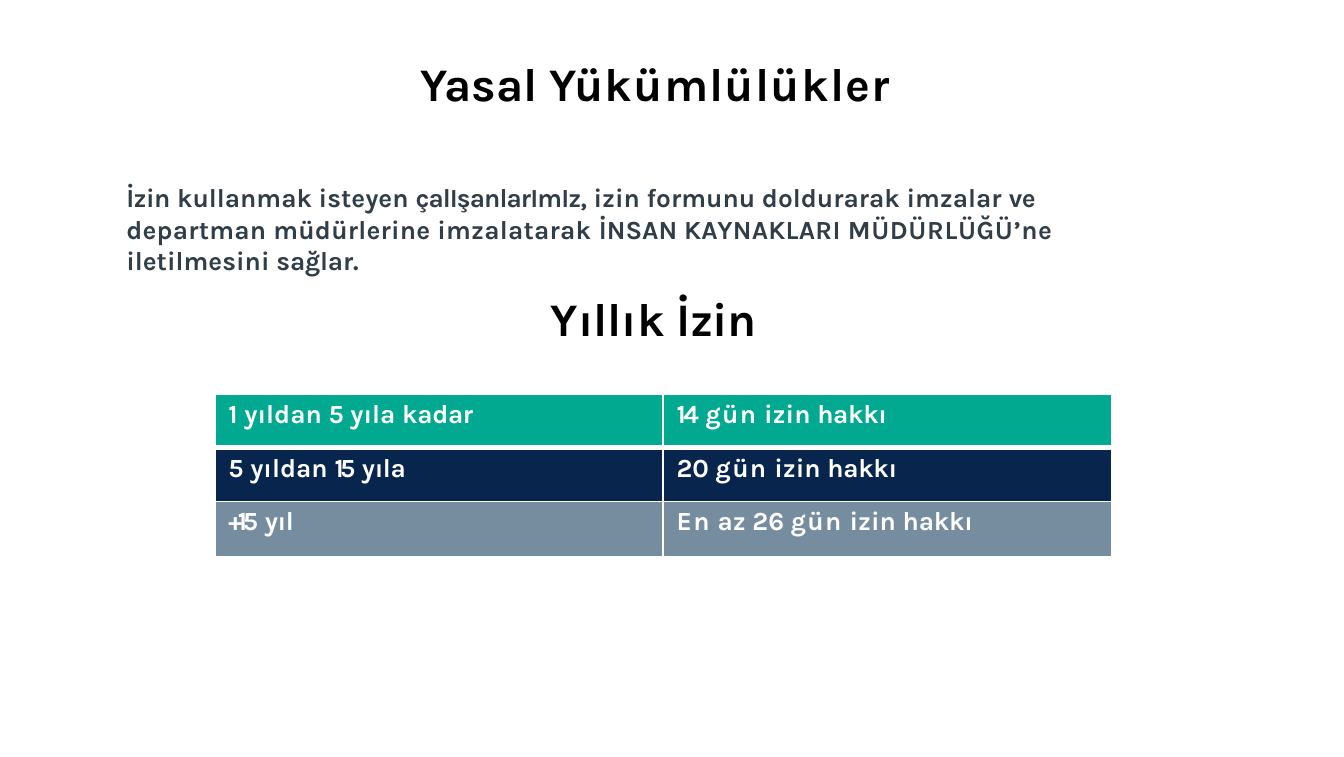
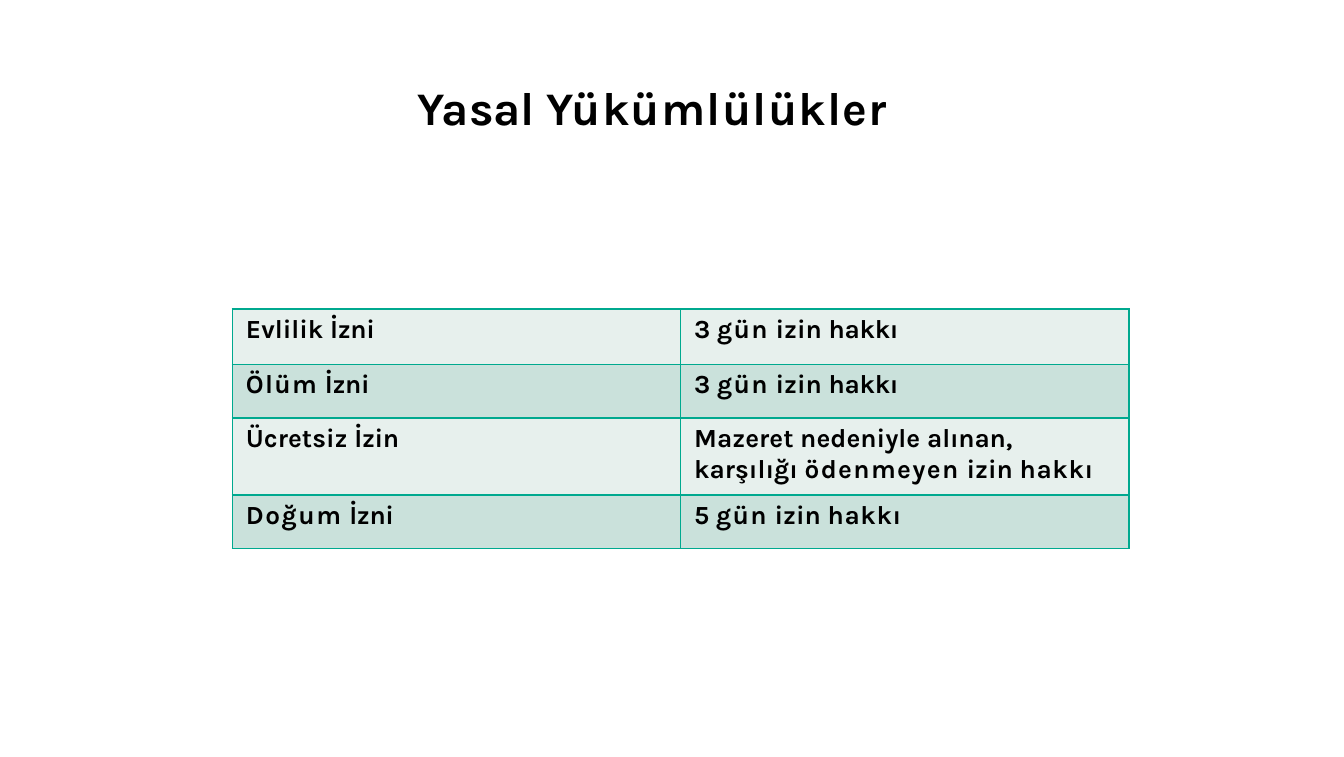
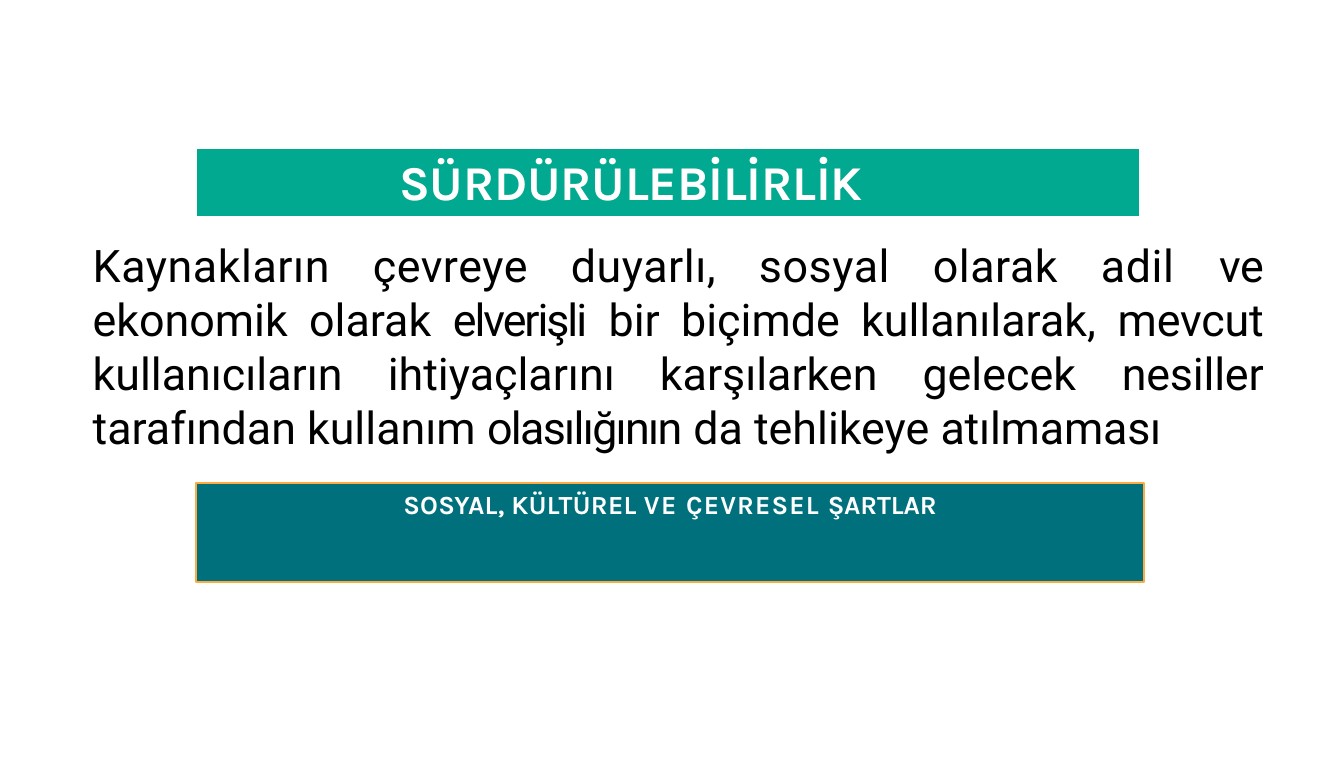
import dataclasses
import typing

import pptx
import pptx.dml.color
import pptx.enum.shapes
import pptx.enum.text
import pptx.oxml
import pptx.oxml.ns
import pptx.util

UNIT = pptx.util.Inches(0.1)
SLIDE_COLUMNS, SLIDE_ROWS = 100, 56.3
WHITE, BLACK, SLATE = "FFFFFF", "000000", "313D47"
GREEN, NAVY, GREY, TEAL, ORANGE = "00A98F", "07254D", "768D9F", "00707C", "FFAB40"
PALE, MINT = "E7F0ED", "CAE1DB"
HEADING_SIZE, TEXT_SIZE = 25, 14
ALIGN = pptx.enum.text.PP_ALIGN

Spans = list[tuple[str, float]]
Point = tuple[float, float]


class Area(typing.NamedTuple):
    """A rectangle in grid columns and rows."""
    left: float
    top: float
    width: float
    height: float


@dataclasses.dataclass
class Paragraph:
    """A paragraph made of (text, letter spacing) spans in one style."""
    spans: Spans
    size: float = TEXT_SIZE
    color: str = BLACK
    font: str = "Karla"
    bold: bool = True
    align: ALIGN = ALIGN.LEFT
    indent: float = 0.1
    before: float = 0


@dataclasses.dataclass
class TableRow:
    """A table row: height, fill, cells of lines, and top and bottom rule widths."""
    height: float
    fill: str
    cells: list[list[Spans]]
    top: float = 1
    bottom: float = 1


def grid(units: float) -> int:
    """Turn grid units into a length."""
    return round(units * UNIT)


def place(values: typing.Iterable[float]) -> list[int]:
    """Turn an area or a point into lengths."""
    return [grid(value) for value in values]


def rgb(color: str) -> pptx.dml.color.RGBColor:
    """Turn a hex string into a colour."""
    return pptx.dml.color.RGBColor.from_string(color)


def add_span(para, text: str, *, font: str, size: float, color: str,
             bold: bool, spacing: float) -> None:
    """Add formatted text to a paragraph."""
    span = para.add_run()
    span.text = text
    span.font.name = font
    span.font.size = pptx.util.Pt(size)
    span.font.bold = bold
    span.font.color.rgb = rgb(color)
    if spacing:
        span._r.get_or_add_rPr().set("spc", str(round(spacing * 100)))


def write(frame, paragraphs: list[Paragraph]) -> None:
    """Fill a text frame with paragraphs."""
    for number, style in enumerate(paragraphs):
        para = frame.add_paragraph() if number else frame.paragraphs[0]
        properties = para._p.get_or_add_pPr()
        properties.set("marL", str(grid(style.indent)))
        properties.set("indent", "0")
        para.alignment = style.align
        if number:
            para.space_before = pptx.util.Pt(style.before)
        for text, spacing in style.spans:
            add_span(para, text, font=style.font, size=style.size, color=style.color,
                     bold=style.bold, spacing=spacing)


def set_margins(target, top: float) -> None:
    """Keep only a top margin on a cell or text frame."""
    target.margin_left = target.margin_right = target.margin_bottom = 0
    target.margin_top = grid(top)


def add_text(page, area: Area, paragraphs: list[Paragraph], margin: float = 0.1) -> None:
    """Add a wrapping text box."""
    frame = page.shapes.add_textbox(*place(area)).text_frame
    frame.word_wrap = True
    frame.auto_size = pptx.enum.text.MSO_AUTO_SIZE.SHAPE_TO_FIT_TEXT
    set_margins(frame, margin)
    write(frame, paragraphs)


def add_title(page, area: Area, spans: Spans, **style) -> None:
    """Add a slide title."""
    add_text(page, area, [Paragraph(spans, **{"size": HEADING_SIZE, **style})], margin=0.2)


def add_border(cell, side: str, color: str, width: float) -> None:
    """Draw one side of a table cell."""
    cell._tc.get_or_add_tcPr().append(pptx.oxml.parse_xml(
        f'<a:ln{side} {pptx.oxml.ns.nsdecls("a")} w="{pptx.util.Pt(width)}">'
        f'<a:solidFill><a:srgbClr val="{color}"/></a:solidFill></a:ln{side}>'))


def add_leave_table(page, left: float, top: float, rows: list[TableRow],
                    text_color: str, border: str) -> None:
    """Add a two-column table of leave rights."""
    area = Area(left, top, 66.7, sum(row.height for row in rows))
    table = page.shapes.add_table(len(rows), 2, *place(area)).table
    table.first_row = table.horz_banding = False
    for row_number, row in enumerate(rows):
        table.rows[row_number].height = grid(row.height)
        for column, lines in enumerate(row.cells):
            cell = table.cell(row_number, column)
            set_margins(cell, 0.4)
            for side, width in (("L", 1), ("R", 1), ("T", row.top), ("B", row.bottom)):
                add_border(cell, side, border, width)
            cell.fill.solid()
            cell.fill.fore_color.rgb = rgb(row.fill)
            write(cell.text_frame, [Paragraph(spans, color=text_color, indent=1, before=0.1)
                                    for spans in lines])


def add_outline(shapes, strokes: list[list[Point]], fill: str = "",
                line: str = "", width: float = 1) -> None:
    """Draw strokes as one freeform, closed when it is filled."""
    builder = shapes.build_freeform(*place(strokes[0][0]))
    for number, (start, *points) in enumerate(strokes):
        if number:
            builder.move_to(*place(start))
        builder.add_line_segments([place(point) for point in points], close=bool(fill))
    shape = builder.convert_to_shape()
    shape.shadow.inherit = False
    if fill:
        shape.fill.solid()
        shape.fill.fore_color.rgb = rgb(fill)
    else:
        shape.fill.background()
    if line:
        shape.line.color.rgb = rgb(line)
        shape.line.width = pptx.util.Pt(width)
    else:
        shape.line.fill.background()


def add_banner(page, area: Area) -> None:
    """Draw the green band with its white rules."""
    left, top, right, bottom = area.left, area.top, area.left + area.width, area.top + area.height
    over = 0.1
    shapes = page.shapes.add_group_shape().shapes
    add_outline(shapes, [[(right, top), (left, top), (left, bottom), (right, bottom)]], fill=GREEN)
    sides = [[(x, top - over), (x, bottom + 2 * over)] for x in (left, right)]
    add_outline(shapes, sides + [[(left - over, top), (right + over, top)]], line=WHITE)
    add_outline(shapes, [[(left - over, bottom), (right + over, bottom)]], line=WHITE, width=3)


def add_caption(page, area: Area, spans: Spans) -> None:
    """Draw the framed box with centred text."""
    box = page.shapes.add_shape(pptx.enum.shapes.MSO_SHAPE.RECTANGLE, *place(area))
    box.shadow.inherit = False
    box.fill.solid()
    box.fill.fore_color.rgb = rgb(TEAL)
    box.line.color.rgb = rgb(ORANGE)
    box.line.width = pptx.util.Pt(1)
    frame = box.text_frame
    frame.word_wrap = True
    frame.vertical_anchor = pptx.enum.text.MSO_ANCHOR.TOP
    set_margins(frame, 0.4)
    write(frame, [Paragraph(spans, color=WHITE, align=ALIGN.CENTER, indent=0)])


def days(number: str, spacing: float = 0, ending: float = -0.2) -> list[Spans]:
    """Give the cell text for a number of days of leave."""
    return [[(number, spacing), (" ", 0), ("gün", 0.7), (" izin ", 0), ("hakkı", ending)]]


LEGAL_TITLE = [("Yasal ", 0), ("Yükümlülükler", 0.7)]


def build_annual_leave(page) -> None:
    """Build the annual leave slide."""
    add_title(page, Area(31.2, 3.9, 37.7, 4.4), LEGAL_TITLE)
    add_text(page, Area(9.3, 13.4, 75.1, 12.5), [
        Paragraph([("İzin", -0.3), (" kullanmak isteyen ", 0), ("çalIşanlarImIz,", -0.5),
                   (" izin formunu doldurarak imzalar ", 0), ("ve ", -0.3),
                   ("departman müdürlerine imzalatarak ", 0.1), ("İNSAN ", 0),
                   ("KAYNAKLARI ", 0.1), ("MÜDÜRLÜĞÜ’ne ", 0.3), ("iletilmesini ", 0),
                   ("sağlar.", -0.1)], color=SLATE),
        Paragraph([("Yıllık ", 0), ("İzin", -0.2)], size=HEADING_SIZE, align=ALIGN.CENTER,
                  indent=3.6, before=7.3)])
    add_leave_table(page, 16, 29.3, [
        TableRow(4, GREEN, [[[("1", -3.4), (" yıldan 5 yıla ", 0), ("kadar", -0.2)]],
                            days("14", -1.4)], bottom=3),
        TableRow(4, NAVY, [[[("5 yıldan ", 0), ("15", -2), (" ", 0), ("yıla", -0.2)]],
                           days("20")], top=3),
        TableRow(4.1, GREY, [[[("+15", -2.4), (" ", 0), ("yıl", -0.2)]],
                             [[("En", 0.7), (" ", 0), *days("az 26", ending=-0.1)[0]]]]),
    ], WHITE, WHITE)


def build_other_leave(page) -> None:
    """Build the slide on other kinds of leave."""
    add_title(page, Area(5.8, 5.7, 88.4, 4.4), LEGAL_TITLE, indent=25.3)
    excuse = [[("Mazeret nedeniyle ", 0), ("alınan,", -0.1)],
              [("karşılığı ", 0), ("ödenmeyen", 0.7), (" izin ", 0), ("hakkı", 0.3)]]
    add_leave_table(page, 17.3, 23, [
        TableRow(4.1, PALE, [[[("Evlilik ", 0), ("İzni", -0.2)]], days("3")]),
        TableRow(4, MINT, [[[("Ölüm", 0.7), (" ", 0), ("İzni", -0.2)]], days("3")]),
        TableRow(5.7, PALE, [[[("Ücretsiz ", 0), ("İzin", -0.2)]], excuse]),
        TableRow(4, MINT, [[[("Doğum", 0.8), (" ", 0), ("İzni", -0.2)]], days("5", ending=0.3)]),
    ], BLACK, GREEN)


def build_sustainability(page) -> None:
    """Build the sustainability slide."""
    add_banner(page, Area(14.6, 11, 70.2, 5.3))
    add_title(page, Area(29.6, 11.1, 40.1, 4.6), [("SÜRDÜRÜLEBİLİRLİK", -0.1)],
              size=26, color=WHITE)
    add_caption(page, Area(14.6, 35.9, 70.5, 7.4), [
        ("SOSYAL, KÜLTÜREL ", 0.1), ("VE ", 0.8), ("ÇEVRESEL ", 0.6), ("ŞARTLAR", -0.1)])
    add_text(page, Area(6.8, 17.6, 87.2, 16.3), [Paragraph([
        ("Kaynakların çevreye duyarlı, sosyal olarak adil ", 0.3), ("ve ", -0.2),
        ("ekonomik olarak ", 0), ("elverişli", -1.1), (" bir biçimde kullanılarak, ", 0),
        ("mevcut ", -0.1), ("kullanıcıların ihtiyaçlarını karşılarken gelecek ", 0),
        ("nesiller ", -0.1), ("tarafından kullanım ", 0), ("olasılığının", -0.9),
        (" da tehlikeye ", 0), ("atılmaması", -0.1)],
        size=24, font="Roboto", bold=False, align=ALIGN.JUSTIFY)])


def main() -> None:
    """Build and save the deck."""
    deck = pptx.Presentation()
    deck.slide_width, deck.slide_height = grid(SLIDE_COLUMNS), grid(SLIDE_ROWS)
    for build in (build_annual_leave, build_other_leave, build_sustainability):
        build(deck.slides.add_slide(deck.slide_layouts[6]))
    deck.save("out.pptx")


if __name__ == "__main__":
    main()
